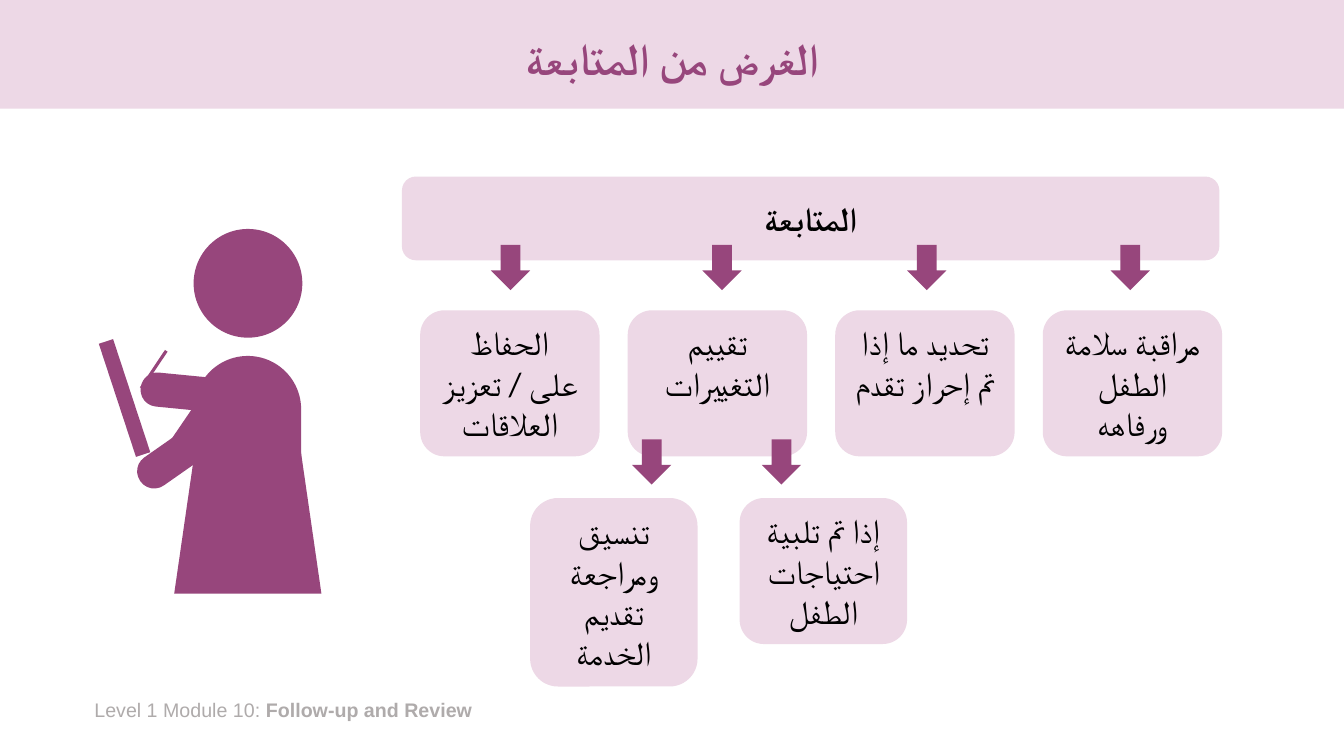
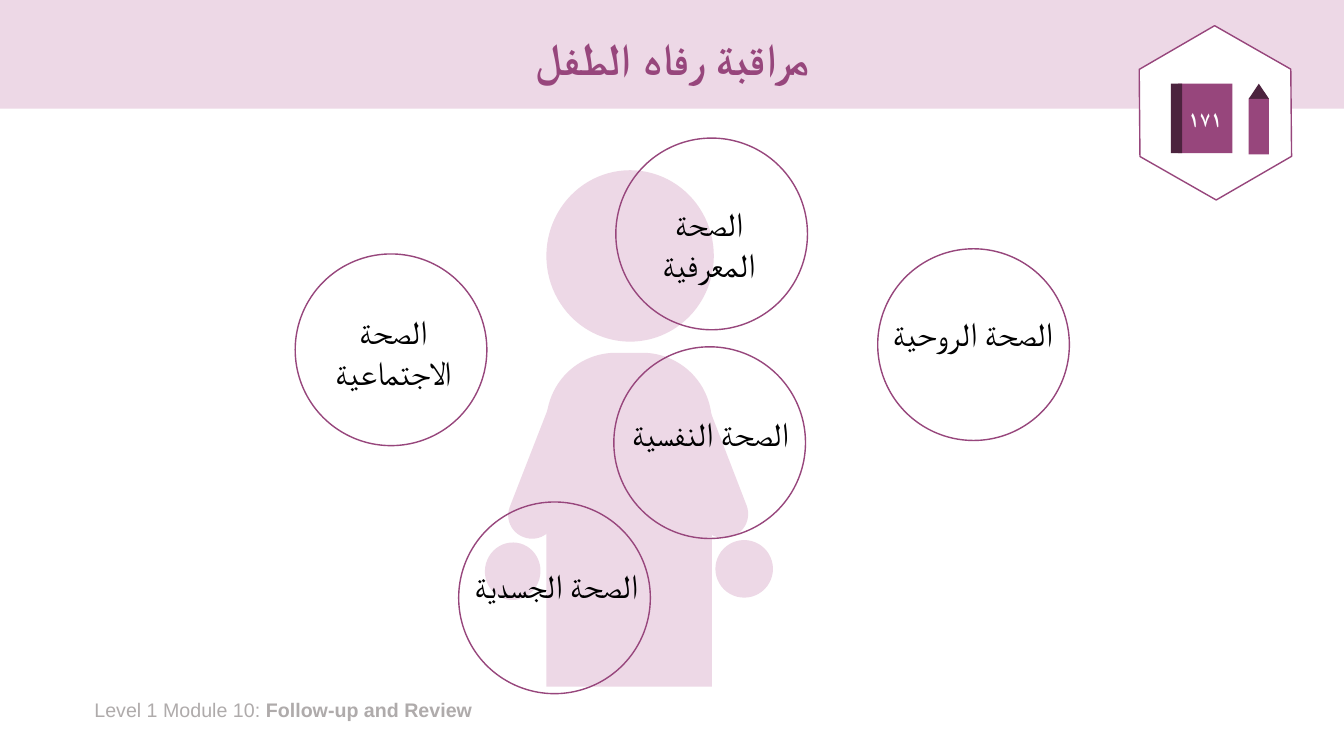
"""Build two Arabic training slides about follow-up and child well-being."""
from lxml import etree
from pptx import Presentation
from pptx.dml.color import RGBColor
from pptx.enum.shapes import MSO_CONNECTOR, MSO_SHAPE
from pptx.enum.text import MSO_ANCHOR, PP_ALIGN
from pptx.oxml.ns import qn
from pptx.util import Cm, Pt

PLUM = RGBColor(0x97, 0x46, 0x7C)
DARK_PLUM = RGBColor(0x4C, 0x23, 0x3E)
PINK = RGBColor(0xED, 0xD8, 0xE6)
GREY = RGBColor(0xAF, 0xAB, 0xAB)
BLACK = RGBColor(0, 0, 0)
WHITE = RGBColor(0xFF, 0xFF, 0xFF)


def add_shape(shapes, kind, x, y, w, h, fill=None, line=None, rot=0, adj=()):
    sp = shapes.add_shape(kind, Cm(x), Cm(y), Cm(w), Cm(h))
    sp.shadow.inherit = False
    sp.rotation = rot
    for i, value in enumerate(adj):
        sp.adjustments[i] = value
    if fill is None:
        sp.fill.background()
    else:
        sp.fill.solid()
        sp.fill.fore_color.rgb = fill
    if line is None:
        sp.line.fill.background()
    else:
        sp.line.color.rgb = line
        sp.line.width = Pt(1)
    return sp


def write(sp, text, size=24, color=BLACK, bold=False, font="Arial",
          arabic_font="Calibri", anchor=MSO_ANCHOR.TOP, wrap=True):
    tf = sp.text_frame
    tf.word_wrap = wrap
    tf.vertical_anchor = anchor
    tf.text = text
    p = tf.paragraphs[0]
    p.alignment = PP_ALIGN.CENTER
    p.font.size = Pt(size)
    p.font.bold = bold
    p.font.color.rgb = color
    p.font.name = font
    pPr = p._p.get_or_add_pPr()
    pPr.set("rtl", "1")
    etree.SubElement(pPr.find(qn("a:defRPr")), qn("a:cs"), typeface=arabic_font)
    return p


prs = Presentation()
prs.slide_width = Cm(33.87)
prs.slide_height = Cm(19.05)
layout = prs.slide_layouts[5]
slides = []
for title, arabic_font in (("الغرض من المتابعة", "Calibri"),
                           ("مراقبة رفاه الطفل", "Arial")):
    s = prs.slides.add_slide(layout)
    sp = s.shapes.title
    sp.left, sp.top, sp.width, sp.height = Cm(2.34), Cm(0.33), Cm(29.21), Cm(2.41)
    p = write(sp, title, 32, PLUM, True, "Calibri", arabic_font, MSO_ANCHOR.MIDDLE)
    p.line_spacing = 0.9
    slides.append(s)
followup, wellbeing = slides

band = add_shape(followup.shapes, MSO_SHAPE.RECTANGLE, 0, 0, 33.87, 2.74, PINK)
footer = followup.shapes.add_textbox(Cm(2.13), Cm(17.45), Cm(11.56), Cm(0.86))
footer.text_frame.word_wrap = True
p = footer.text_frame.paragraphs[0]
p.font.size = Pt(14)
p.font.name = "Arial"
p.font.color.rgb = GREY
for text, bold in (("Level 1 Module 10: ", False), ("Follow-up and Review", True)):
    r = p.add_run()
    r.text = text
    r.font.bold = bold
layout.shapes.element.insert(2, band.element)
layout.shapes.element.insert(3, footer.element)

heading = add_shape(followup.shapes, MSO_SHAPE.ROUNDED_RECTANGLE,
                    10.13, 4.45, 20.6, 2.11, PINK)
write(heading, "المتابعة", bold=True, font="Calibri", arabic_font="Arial",
      anchor=MSO_ANCHOR.MIDDLE)

purposes = ("الحفاظ على / تعزيز العلاقات", "تقييم التغييرات",
            "تحديد ما إذا تم إحراز تقدم", "مراقبة سلامة الطفل ورفاهه")
boxes = [(text, 10.59 + 5.23 * i, 7.82, 4.52, 3.68) for i, text in enumerate(purposes)]
boxes += [("تنسيق ومراجعة تقديم الخدمة", 13.36, 12.55, 4.22, 4.75),
          ("إذا تم تلبية احتياجات الطفل", 18.64, 12.55, 4.22, 3.68)]
for text, x, y, w, h in boxes:
    sp = add_shape(followup.shapes, MSO_SHAPE.ROUNDED_RECTANGLE, x, y, w, h, PINK)
    write(sp, text)

teacher = followup.shapes.add_group_shape().shapes
LIMB = MSO_SHAPE.ROUND_2_SAME_RECTANGLE
ROUND_END = (0.49, 0)
for kind, x, y, w, h, rot, adj in (
        (LIMB, 4.57, 9.8, 0.86, 2.06, 214.3, ROUND_END),
        (LIMB, 3.68, 11.02, 0.86, 1.4, 235, ROUND_END),
        (MSO_SHAPE.RECTANGLE, 2.95, 8.53, 0.38, 3, 341.8, ()),
        (LIMB, 4.29, 8.71, 0.86, 2.36, 275.6, ROUND_END),
        (MSO_SHAPE.FLOWCHART_MANUAL_OPERATION, 4.39, 9.83, 3.71, 5.13, 180, ()),
        (LIMB, 4.9, 8.97, 2.69, 5.92, 0, (0.5, 0)),
        (MSO_SHAPE.OVAL, 4.88, 5.77, 2.74, 2.74, 0, ())):
    add_shape(teacher, kind, x, y, w, h, PLUM, rot=rot, adj=adj)
pen = teacher.add_connector(MSO_CONNECTOR.STRAIGHT, Cm(4.19), Cm(8.84), Cm(3.56), Cm(9.78))
pen.line.color.rgb = PLUM
pen.line.width = Pt(2.25)
etree.SubElement(pen.element.spPr, qn("a:effectLst"))

for y, lefts in ((6.17, (12.37, 17.7, 22.86, 27.99)), (11.07, (15.93, 19.2))):
    for x in lefts:
        add_shape(followup.shapes, MSO_SHAPE.DOWN_ARROW, x, y, 0.99, 1.14, PLUM)

child = wellbeing.shapes.add_group_shape().shapes
for kind, x, y, w, h, rot, adj in (
        (LIMB, 13.77, 8.89, 4.17, 8.41, 0, (0.42, 0)),
        (MSO_SHAPE.OVAL, 13.77, 4.29, 4.22, 4.32, 0, ()),
        (LIMB, 13.28, 9.88, 1.19, 3.78, 201.3, ROUND_END),
        (MSO_SHAPE.OVAL, 12.22, 13.67, 1.4, 1.45, 8.5, ()),
        (LIMB, 17.17, 9.86, 1.22, 3.78, 158.9, ROUND_END),
        (MSO_SHAPE.OVAL, 18.03, 13.61, 1.45, 1.45, 351.8, ())):
    add_shape(child, kind, x, y, w, h, PINK, rot=rot, adj=adj)

badge = wellbeing.shapes.add_group_shape().shapes
add_shape(badge, MSO_SHAPE.HEXAGON, 28.42, 0.94, 4.42, 3.81, WHITE, PLUM, 29.7, (0.29, 1.15))
book = add_shape(badge, MSO_SHAPE.RECTANGLE, 29.69, 2.11, 1.37, 1.75, PLUM)
write(book, "١٧١", 16, WHITE, True, arabic_font="Arial",
      anchor=MSO_ANCHOR.MIDDLE, wrap=False)
add_shape(badge, MSO_SHAPE.RECTANGLE, 29.51, 2.11, 0.28, 1.75, DARK_PLUM)
add_shape(badge, MSO_SHAPE.ISOSCELES_TRIANGLE, 31.47, 2.11, 0.51, 0.38, DARK_PLUM)
add_shape(badge, MSO_SHAPE.RECTANGLE, 31.47, 2.49, 0.51, 1.4, PLUM)

for text, x, y, label_x, label_y, label_w, label_h in (
        ("الصحة الاجتماعية", 7.44, 6.4, 7.49, 7.72, 4.85, 2.31),
        ("الصحة المعرفية", 15.52, 3.48, 15.52, 5, 4.7, 2.31),
        ("الصحة الروحية", 22.12, 6.27, 22.17, 7.77, 4.7, 2.31),
        ("الصحة النفسية", 15.47, 8.74, 15.14, 10.29, 5.54, 1.27),
        ("الصحة الجسدية", 11.56, 12.65, 11.25, 14.12, 5.54, 1.27)):
    domain = wellbeing.shapes.add_group_shape().shapes
    label = domain.add_textbox(Cm(label_x), Cm(label_y), Cm(label_w), Cm(label_h))
    write(label, text)
    add_shape(domain, MSO_SHAPE.OVAL, x, y, 4.83, 4.83, line=PLUM)

prs.save("out.pptx")
